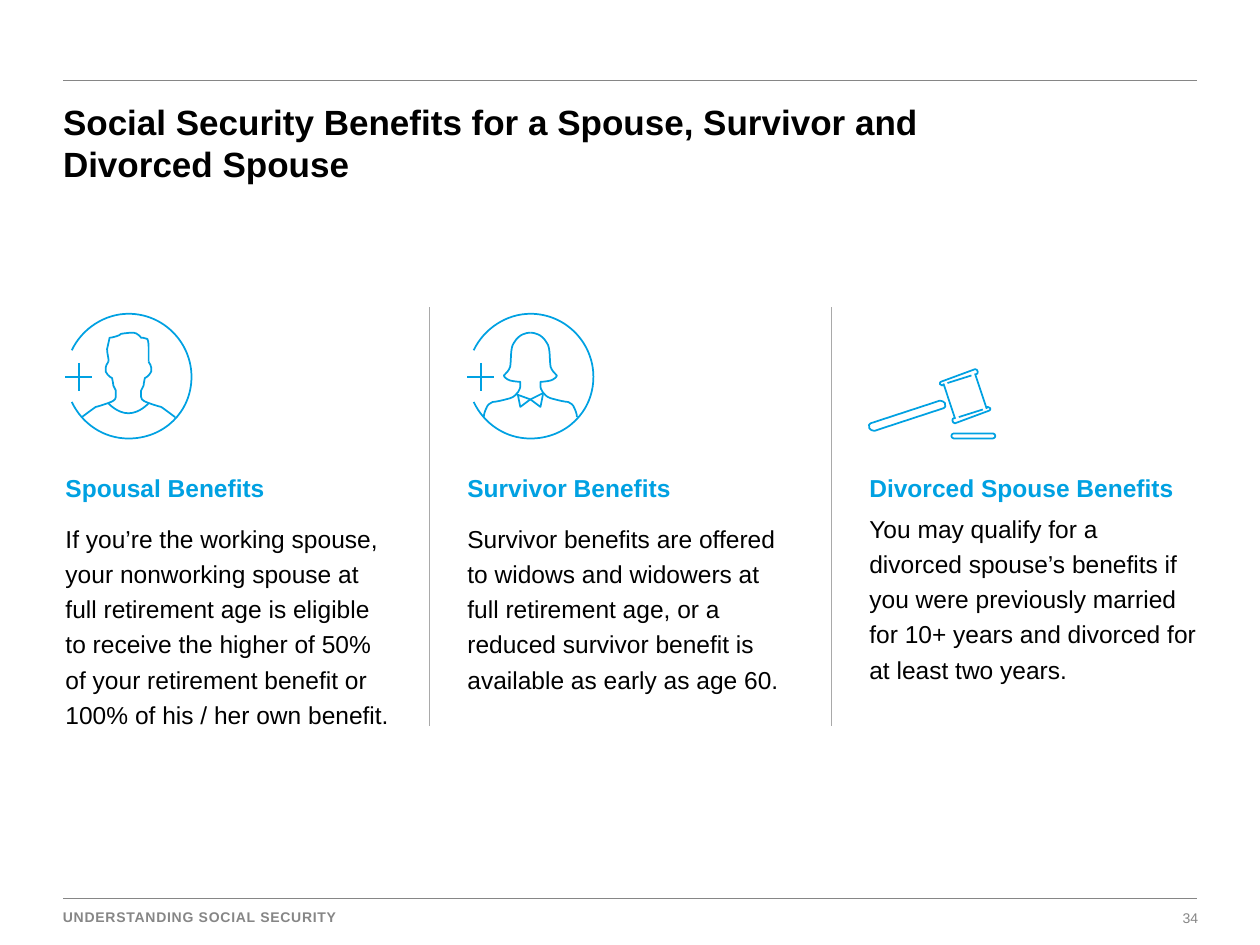
from lxml import etree
from pptx import Presentation
from pptx.dml.color import RGBColor
from pptx.enum.shapes import MSO_CONNECTOR
from pptx.enum.text import MSO_ANCHOR, PP_ALIGN
from pptx.oxml.ns import qn
from pptx.util import Inches, Pt

STRAIGHT = MSO_CONNECTOR.STRAIGHT
TOP, BOTTOM = MSO_ANCHOR.TOP, MSO_ANCHOR.BOTTOM
LEFT, RIGHT = PP_ALIGN.LEFT, PP_ALIGN.RIGHT
BLUE, GRAY, PALE_GRAY, BLACK = "00A1E2", "868686", "A9A9A9", "000000"
COLUMN_LEFT, COLUMN_PITCH, COLUMN_WIDTH = 0.52, 3.19, 2.6

COLUMNS = [
    ("Spousal Benefits", 4.11,
     "If you’re the working spouse, your nonworking spouse at full retirement age is eligible "
     "to receive the higher of 50% of your retirement benefit or 100% of his / her own benefit."),
    ("Survivor Benefits", 4.11,
     "Survivor benefits are offered to widows and widowers at full retirement age, or a "
     "reduced survivor benefit is available as early as age 60."),
    ("Divorced Spouse Benefits", 4.03,
     "You may qualify for a \vdivorced spouse’s benefits if you were previously married "
     "for 10+ years and divorced for at least two years."),
]

MAN_SIDE = [
    (1.39, 3.31), (1.39, 3.31, 1.31, 3.25, 1.28, 3.23),
    (1.24, 3.22, 1.15, 3.19, 1.14, 3.18), (1.13, 3.17, 1.12, 3.17, 1.12, 3.15),
    (1.12, 3.13, 1.12, 3.1, 1.12, 3.1), (1.12, 3.1, 1.13, 3.08, 1.14, 3.06),
    (1.14, 3.05, 1.15, 3, 1.15, 3), (1.15, 3, 1.18, 2.99, 1.2, 2.95),
    (1.21, 2.9, 1.18, 2.88, 1.18, 2.87),
]
MAN_HAIR = [
    (1.18, 2.87), (1.18, 2.75), (1.18, 2.75, 1.18, 2.71, 1.17, 2.69),
    (1.15, 2.68, 1.12, 2.68, 1.12, 2.68), (1.12, 2.68, 1.09, 2.64, 1.06, 2.64),
    (1.01, 2.64, 0.96, 2.65, 0.96, 2.65), (0.96, 2.65, 0.94, 2.67, 0.92, 2.67),
    (0.9, 2.68, 0.87, 2.68, 0.87, 2.68), (0.87, 2.68, 0.86, 2.73, 0.85, 2.77),
    (0.85, 2.81, 0.87, 2.87, 0.86, 2.87),
]
MAN_COLLAR = [
    (0.86, 3.2), (0.86, 3.2, 0.93, 3.28, 1.02, 3.28), (1.11, 3.28, 1.18, 3.2, 1.18, 3.2),
]
WOMAN_SIDE = [
    (4.58, 3.31), (4.58, 3.28, 4.56, 3.24, 4.56, 3.24),
    (4.55, 3.21, 4.53, 3.2, 4.51, 3.19), (4.49, 3.19, 4.44, 3.18, 4.37, 3.16),
    (4.31, 3.14, 4.29, 3.08, 4.29, 3.07), (4.29, 3.06, 4.29, 3.03, 4.29, 3.03),
    (4.29, 3.03, 4.33, 3.03, 4.37, 3.02), (4.4, 3.01, 4.42, 2.99, 4.42, 2.98),
    (4.4, 2.96, 4.38, 2.94, 4.37, 2.91), (4.36, 2.84, 4.37, 2.76, 4.34, 2.72),
    (4.3, 2.65, 4.24, 2.64, 4.21, 2.64),
]
WOMAN_NECKLINE = [(4.1, 3.13), (4.21, 3.17), (4.31, 3.12)]
WOMAN_COLLAR = [(4.21, 3.17), (4.29, 3.23), (4.31, 3.13)]
GAVEL_HEAD_HALF = [
    (7.83, 3.24), (7.74, 2.97), (7.75, 2.97), (7.76, 2.97, 7.76, 2.96, 7.76, 2.95),
    (7.76, 2.94, 7.75, 2.93, 7.74, 2.93), (7.47, 3.03),
    (7.46, 3.03, 7.46, 3.04, 7.46, 3.05), (7.47, 3.06, 7.47, 3.06, 7.48, 3.06),
    (7.49, 3.05),
]
GAVEL_HANDLE_HALF = [
    (7.5, 3.2), (7.51, 3.22, 7.5, 3.24, 7.49, 3.24), (6.94, 3.42),
    (6.92, 3.42, 6.91, 3.41, 6.9, 3.4),
]
GAVEL_BASE_HALF = [
    (7.9, 3.46), (7.9, 3.47, 7.89, 3.48, 7.88, 3.48), (7.57, 3.48),
    (7.56, 3.48, 7.55, 3.47, 7.55, 3.46),
]


def color(hex_value):
    return RGBColor.from_string(hex_value)


def add_text(slide, box, text, size, hex_value, bold=False, align=LEFT, anchor=TOP,
             insets=(0, 0, 0, 0), spacing=None, wrap=True, tracking=None):
    frame = slide.shapes.add_textbox(*map(Inches, box)).text_frame
    frame.word_wrap = wrap
    frame.vertical_anchor = anchor
    (frame.margin_left, frame.margin_top,
     frame.margin_right, frame.margin_bottom) = map(Inches, insets)
    frame.text = text
    paragraph = frame.paragraphs[0]
    paragraph.alignment = align
    paragraph.line_spacing = spacing
    for run in paragraph.runs:
        run.font.name = "Arial"
        run.font.size = Pt(size)
        run.font.bold = bold
        run.font.color.rgb = color(hex_value)
        if tracking:
            run.font._element.set("spc", str(tracking))


def add_line(slide, start, end, hex_value, width=1):
    line = slide.shapes.add_connector(STRAIGHT, *map(Inches, (*start, *end)))
    line.line.color.rgb = color(hex_value)
    line.line.width = Pt(width)
    etree.SubElement(line._element.spPr, qn("a:effectLst"))


def pairs(step):
    return list(zip(step[::2], step[1::2]))


def mirror(contour, axis):
    return [tuple(n for x, y in pairs(step) for n in (2 * axis - x, y)) for step in contour]


def full_turn(half):
    center_x, center_y = half[0][0] + half[-1][-2], half[0][1] + half[-1][-1]
    return half + [tuple(n for x, y in pairs(step) for n in (center_x - x, center_y - y))
                   for step in half]


def bend_segments(outline, steps):
    segments = list(outline._element.iter(qn("a:lnTo")))
    for segment, step in zip(segments, steps):
        if len(step) == 2:
            continue
        curve = etree.Element(qn("a:cubicBezTo"))
        for x, y in pairs(step):
            point = etree.SubElement(curve, qn("a:pt"))
            point.set("x", str(Inches(x) - outline.left))
            point.set("y", str(Inches(y) - outline.top))
        segment.getparent().replace(segment, curve)


def add_outline(slide, contours, close=False):
    builder = None
    for contour in contours:
        start, *ends = [tuple(map(Inches, step[-2:])) for step in contour]
        if builder is None:
            builder = slide.shapes.build_freeform(*start, scale=1.0)
        else:
            builder.move_to(*start)
        builder.add_line_segments(ends, close=close)
    outline = builder.convert_to_shape()
    bend_segments(outline, [step for contour in contours for step in contour[1:]])
    outline.shadow.inherit = False
    outline.fill.background()
    outline.line.color.rgb = color(BLUE)
    outline.line.width = Pt(1)


def add_person(slide, left, figure):
    middle, right = left + 0.5, left + 1
    ring = [
        (left + 0.05, 2.78), (left + 0.13, 2.61, left + 0.31, 2.49, middle, 2.49),
        (left + 0.78, 2.49, right, 2.72, right, 2.99),
        (right, 3.27, left + 0.78, 3.48, middle, 3.48),
        (left + 0.3, 3.48, left + 0.13, 3.36, left + 0.05, 3.19),
    ]
    plus = [[(left, 2.99), (left + 0.21, 2.99)], [(left + 0.11, 2.88), (left + 0.11, 3.1)]]
    add_outline(slide, [*plus, ring, *figure])


def add_gavel(slide):
    add_line(slide, (7.61, 3.31), (7.8, 3.25), BLUE)
    add_line(slide, (7.52, 3.04), (7.71, 2.98), BLUE)
    for half in (GAVEL_HEAD_HALF, GAVEL_HANDLE_HALF, GAVEL_BASE_HALF):
        add_outline(slide, [full_turn(half)], close=True)


def add_column(slide, left, heading, body_top, body):
    add_text(slide, (left, 3.67, COLUMN_WIDTH, 0.37), heading, 14, BLUE, bold=True,
             anchor=BOTTOM, insets=(0, 0.05, 0.1, 0.05))
    add_text(slide, (left, body_top, COLUMN_WIDTH, 1.76), body, 14, BLACK, spacing=1.2)


def main():
    deck = Presentation()
    deck.slide_width, deck.slide_height = Inches(10), Inches(7.5)
    slide = deck.slides.add_slide(deck.slide_layouts[6])

    for rule_y in (0.64, 7.13):
        add_line(slide, (0.5, rule_y), (9.5, rule_y), GRAY)
    add_text(slide, (0.5, 0.8, 8.99, 0.67),
             "Social Security Benefits for a Spouse, Survivor and \vDivorced Spouse",
             20, BLACK, bold=True)
    add_text(slide, (0.5, 7.21, 3.1, 0.15), "UNDERSTANDING SOCIAL SECURITY", 8, GRAY,
             bold=True, wrap=False, tracking=40)
    add_text(slide, (9.37, 7.22, 0.14, 0.13), "34", 8, GRAY, align=RIGHT, wrap=False)

    for index, column in enumerate(COLUMNS):
        left = COLUMN_LEFT + index * COLUMN_PITCH
        add_column(slide, left, *column)
        if index:
            add_line(slide, (left - 0.3, 2.44), (left - 0.3, 5.76), PALE_GRAY, 0.75)

    add_person(slide, COLUMN_LEFT, [MAN_SIDE, mirror(MAN_SIDE, 1.02), MAN_HAIR, MAN_COLLAR])
    add_person(slide, COLUMN_LEFT + COLUMN_PITCH, [WOMAN_SIDE, mirror(WOMAN_SIDE, 4.21)])
    add_outline(slide, [WOMAN_NECKLINE])
    add_outline(slide, [WOMAN_COLLAR, mirror(WOMAN_COLLAR, 4.21)])
    add_gavel(slide)
    deck.save("out.pptx")


if __name__ == "__main__":
    main()
